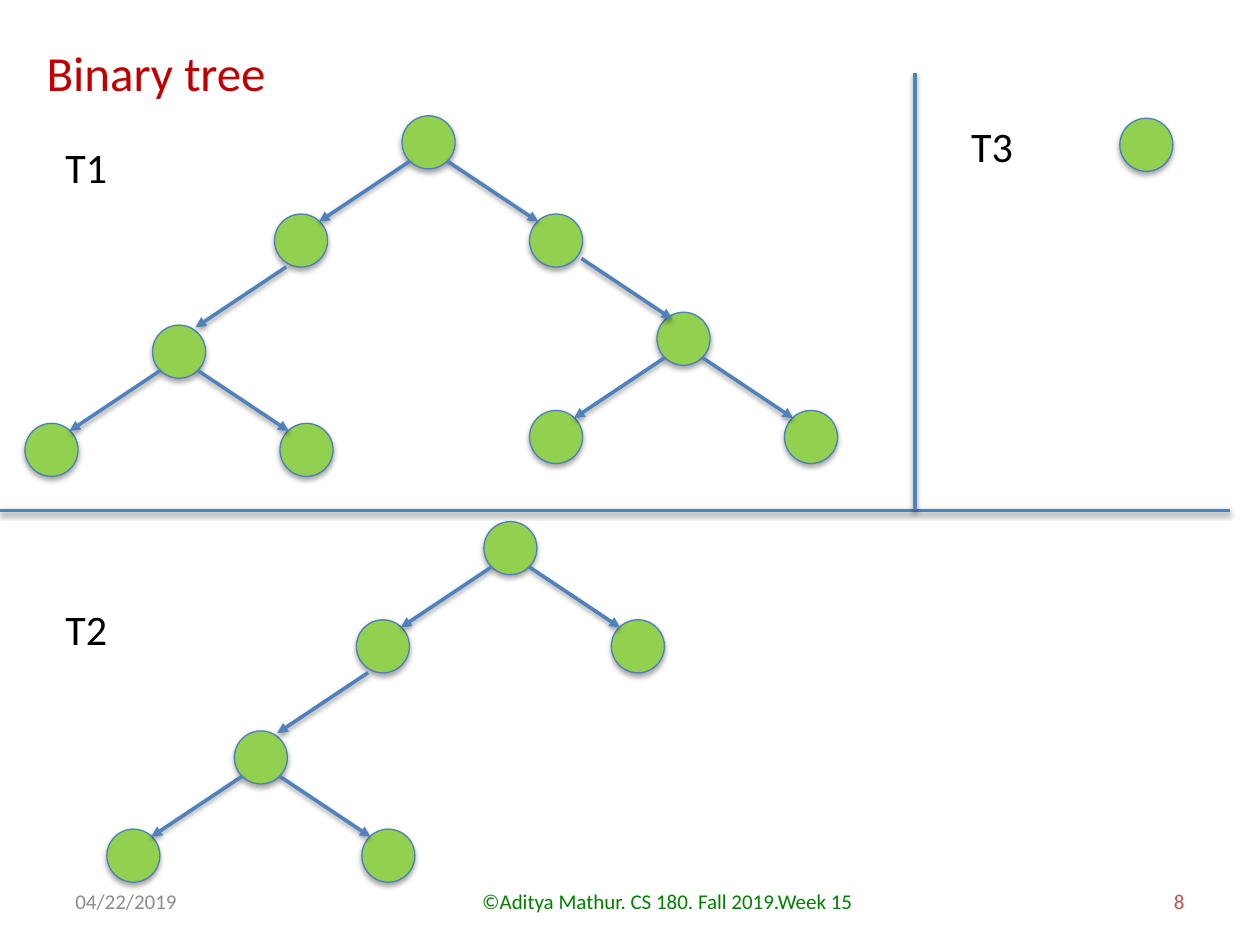
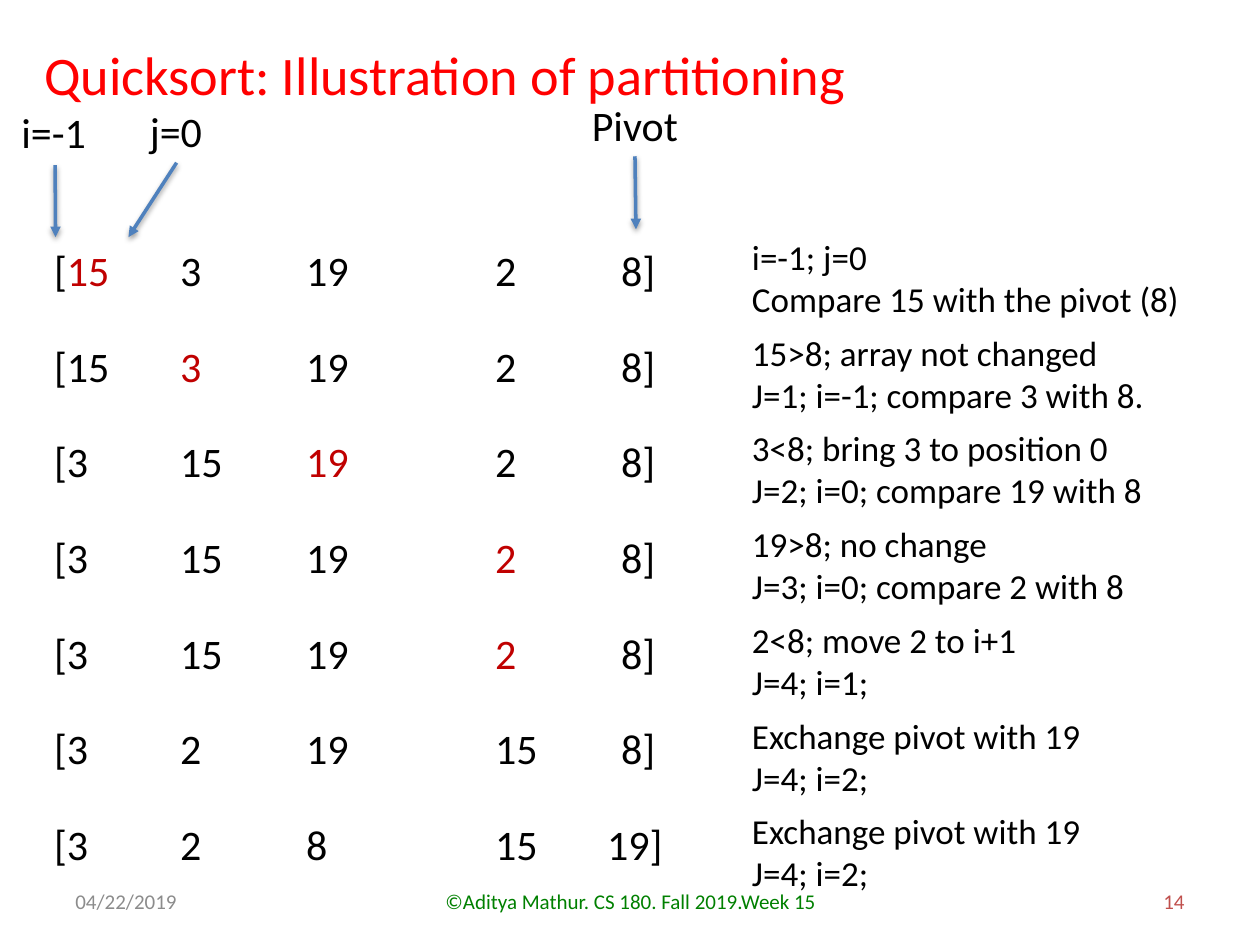
from lxml import etree
from pptx import Presentation
from pptx import util as u
from pptx.dml.color import RGBColor
from pptx.enum import shapes, text as t
from pptx.oxml.ns import qn

COLORS = {
    "title": "C00000", "bright_title": "FF0000", "body": "000000",
    "current": "C00000", "date": "8C8C8C", "credit": "008000",
    "number": "C0504D", "node": "92D050", "node_edge": "4B7EBC",
    "line": "4F81BD", "shadow": "000000",
}
FONT = "Calibri"

# Tree geometry in cm: offsets are measured from a node's centre
NODE_SIZE = 1.07
CHILD_DX, CHILD_DY = 2.57, 1.98
ARROW_DX, ARROW_DY = 1.83, 1.22
ARROW_START = 0.38

# Partitioning rows in cm
ROW_STEP = 1.93
COLUMN_STOPS = [2.54, 5.08, 8.89, 11.43]
LAST_ROW_STOPS = COLUMN_STOPS[:3] + [11.15]

# Array values, index of the compared value, explanation, explanation width
PARTITION_STEPS = [
    ((15, 3, 19, 2, 8), 0, "i=-1; j=0\nCompare 15 with the pivot (8)", 9.19),
    ((15, 3, 19, 2, 8), 1,
     "15>8; array not changed\nJ=1; i=-1; compare 3 with 8.", 8.48),
    ((3, 15, 19, 2, 8), 2,
     "3<8; bring 3 to position 0\nJ=2; i=0; compare 19 with 8", 8.46),
    ((3, 15, 19, 2, 8), 3, "19>8; no change\nJ=3; i=0; compare 2 with 8", 8.08),
    ((3, 15, 19, 2, 8), 3, "2<8; move 2 to i+1\nJ=4; i=1;", 5.89),
    ((3, 2, 19, 15, 8), None, "Exchange pivot with 19\nJ=4; i=2;", 7.19),
    ((3, 2, 8, 15, 19), None, "Exchange pivot with 19\nJ=4; i=2;", 7.19),
]


def rgb(name):
    return RGBColor.from_string(COLORS[name])


def add_text(slide, content, x, y, width, height=1.27, *, size=24, color="body",
             align=t.PP_ALIGN.LEFT, anchor=t.MSO_ANCHOR.TOP, wrap=False, stops=()):
    """Write a string, or one paragraph given as (text, colour) runs."""
    box = slide.shapes.add_textbox(u.Cm(x), u.Cm(y), u.Cm(width), u.Cm(height))
    frame = box.text_frame
    frame.word_wrap = wrap
    frame.vertical_anchor = anchor
    if isinstance(content, str):
        lines = [[(line, color)] for line in content.split("\n")]
    else:
        lines = [content]
    for index, runs in enumerate(lines):
        paragraph = frame.add_paragraph() if index else frame.paragraphs[0]
        paragraph.alignment = align
        if stops:
            tab_list = etree.SubElement(paragraph._p.get_or_add_pPr(), qn("a:tabLst"))
            for stop in stops:
                etree.SubElement(tab_list, qn("a:tab"), pos=str(u.Cm(stop)), algn="l")
        for words, run_color in runs:
            run = paragraph.add_run()
            run.text = words
            run.font.size = u.Pt(size)
            run.font.name = FONT
            run.font.color.rgb = rgb(run_color)


def add_shadow(shape, distance, opacity):
    """Give a shape or connector a soft shadow straight below it."""
    properties = shape._element.spPr
    effects = properties.find(qn("a:effectLst"))
    if effects is None:
        effects = etree.SubElement(properties, qn("a:effectLst"))
    shadow = etree.SubElement(
        effects, qn("a:outerShdw"), blurRad=str(u.Pt(3.1)),
        dist=str(u.Pt(distance)), dir="5400000", rotWithShape="0")
    tint = etree.SubElement(shadow, qn("a:srgbClr"), val=COLORS["shadow"])
    etree.SubElement(tint, qn("a:alpha"), val=str(opacity * 1000))


def add_line(slide, x1, y1, x2, y2, arrow=False):
    line = slide.shapes.add_connector(
        shapes.MSO_CONNECTOR.STRAIGHT, u.Cm(x1), u.Cm(y1), u.Cm(x2), u.Cm(y2))
    line.line.color.rgb = rgb("line")
    line.line.width = u.Pt(2)
    if arrow:
        etree.SubElement(line.line._get_or_add_ln(), qn("a:tailEnd"), type="triangle")
    add_shadow(line, 1.6, 38)


def add_node(slide, x, y):
    """Draw a tree node centred on x, y."""
    node = slide.shapes.add_shape(
        shapes.MSO_SHAPE.OVAL, u.Cm(x - NODE_SIZE / 2), u.Cm(y - NODE_SIZE / 2),
        u.Cm(NODE_SIZE), u.Cm(NODE_SIZE))
    node.fill.solid()
    node.fill.fore_color.rgb = rgb("node")
    node.line.color.rgb = rgb("node_edge")
    node.line.width = u.Pt(0.75)
    node.shadow.inherit = False
    add_shadow(node, 1.8, 35)


def add_branch(slide, x, y, side):
    """Draw a child arrow from x, y; side is -1 for left, 1 for right."""
    add_line(slide, x, y, x + side * ARROW_DX, y + ARROW_DY, arrow=True)


def add_fork(slide, x, y):
    """Draw a parent with its two children."""
    add_node(slide, x, y)
    for side in (-1, 1):
        add_node(slide, x + side * CHILD_DX, y + CHILD_DY)
    for side in (-1, 1):
        add_branch(slide, x + side * ARROW_START, y + ARROW_START, side)


def add_left_tree(slide, x, y):
    """Draw a root fork whose left child leads to another fork."""
    add_fork(slide, x, y)
    left_x, left_y = x - CHILD_DX, y + CHILD_DY
    add_fork(slide, left_x - 2.46, left_y + 2.24)
    add_branch(slide, left_x - 0.3, left_y + 0.53, -1)


def add_footer(slide, number, credit_width):
    style = dict(height=1.02, size=12, anchor=t.MSO_ANCHOR.MIDDLE, wrap=True)
    add_text(slide, "04/22/2019", 1.27, 17.65, 5.92, color="date", **style)
    add_text(slide, "©Aditya Mathur. CS 180. Fall 2019.Week 15", 8.69, 17.65,
             credit_width, color="credit", align=t.PP_ALIGN.CENTER, **style)
    add_text(slide, str(number), 18.21, 17.65, 5.92, color="number",
             align=t.PP_ALIGN.RIGHT, **style)


def build_binary_trees(slide):
    add_footer(slide, 8, 9.53)
    add_text(slide, "Binary tree", 0.69, 0.74, 7.09, 1.45, size=28,
             color="title", wrap=True)

    # T1: the left tree plus a fork below the right child
    root_x, root_y = 8.64, 2.87
    add_left_tree(slide, root_x, root_y)
    right_x, right_y = root_x + CHILD_DX, root_y + CHILD_DY
    add_fork(slide, right_x + CHILD_DX, right_y + CHILD_DY)
    add_branch(slide, right_x + 0.51, right_y + 0.36, 1)

    # T2 and the single-node T3
    add_left_tree(slide, 10.29, 11.05)
    add_node(slide, 23.11, 2.92)

    # Tree names and dividers
    for name, x, y in (("T1", 1.07, 2.72), ("T2", 1.07, 12.04), ("T3", 19.33, 2.31)):
        add_text(slide, name, x, y, 1.37)
    add_line(slide, 0, 10.29, 24.79, 10.29)
    add_line(slide, 18.44, 1.47, 18.44, 10.29)


def array_runs(values, current):
    """List the runs of one array row, with the compared value in colour."""
    runs = [("[", "body")]
    for index, value in enumerate(values):
        if index:
            runs.append(("\t", "body"))
        runs.append((str(value), "current" if index == current else "body"))
    return runs + [("]", "body")]


def build_partitioning(slide):
    add_text(slide, "Quicksort: Illustration of partitioning", 0.64, 0.71, 17.5, 1.57,
             size=31, color="bright_title", wrap=True)
    add_footer(slide, 14, 8.05)

    # Array rows with their explanations
    for row, (values, current, note, note_width) in enumerate(PARTITION_STEPS):
        is_last = row == len(PARTITION_STEPS) - 1
        add_text(slide, array_runs(values, current), 0.84, 4.8 + row * ROW_STEP,
                 13.06 if is_last else 12.75,
                 stops=LAST_ROW_STOPS if is_last else COLUMN_STOPS)
        add_text(slide, note, 14.91, 4.62 + row * ROW_STEP, note_width, 1.96, size=20)

    # Index and pivot pointers: name, its place and width, then the arrow
    pointers = [
        ("i=-1", 0.18, 2.03, 1.83, (1.11, 3.33, 1.12, 4.78)),
        ("j=0", 2.77, 2.01, 1.57, (3.56, 3.28, 2.59, 4.78)),
        ("Pivot", 11.68, 1.88, 2.26, (12.8, 3.15, 12.82, 4.62)),
    ]
    for name, x, y, width, arrow in pointers:
        add_text(slide, name, x, y, width)
        add_line(slide, *arrow, arrow=True)


def main():
    deck = Presentation()
    deck.slide_width, deck.slide_height = u.Cm(25.4), u.Cm(19.05)
    for build in (build_binary_trees, build_partitioning):
        build(deck.slides.add_slide(deck.slide_layouts[6]))
    deck.save("out.pptx")


if __name__ == "__main__":
    main()
